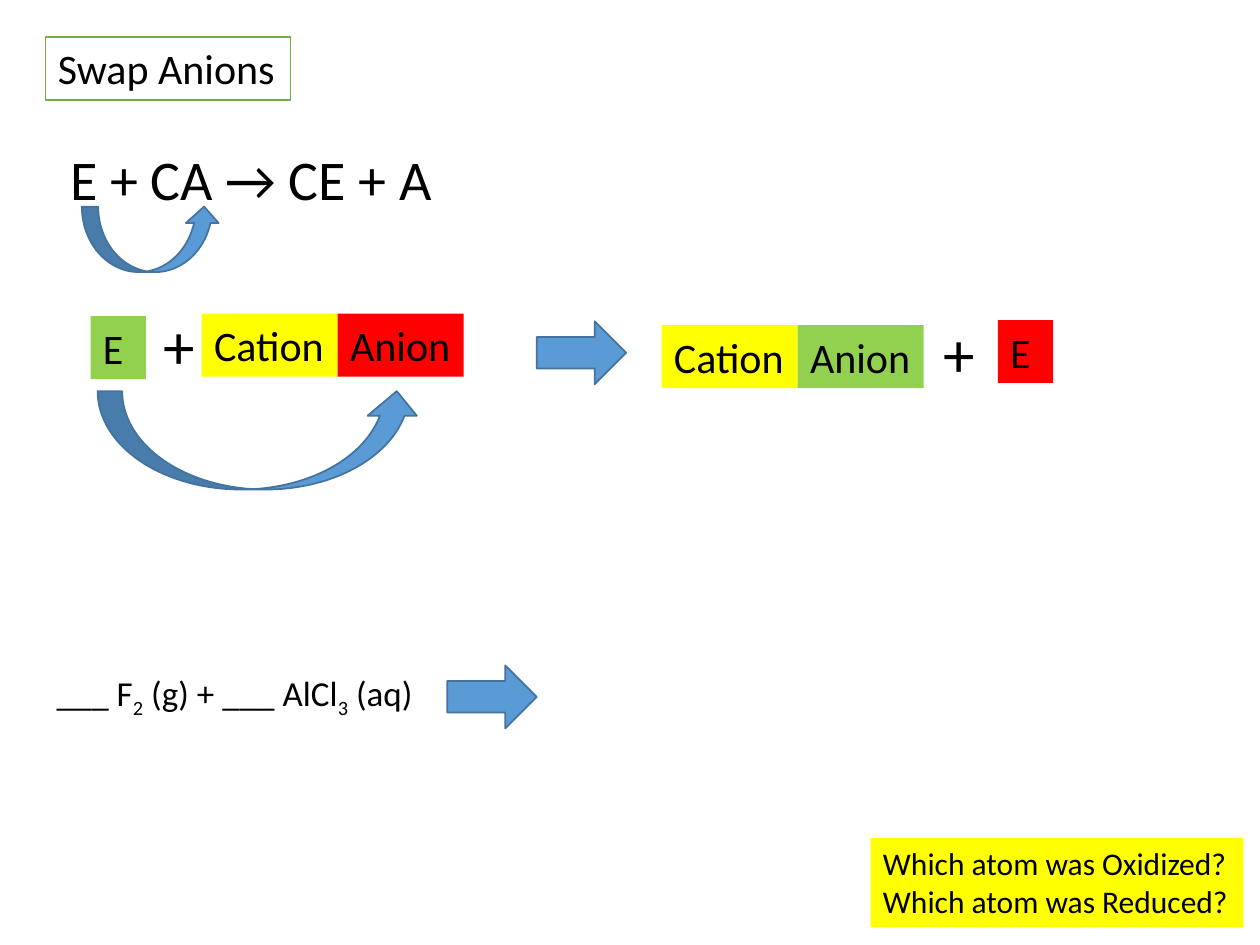
import pptx
import pptx.dml.color
import pptx.enum.shapes
import pptx.enum.text
import pptx.util

Pt = pptx.util.Pt
SHAPES = pptx.enum.shapes.MSO_SHAPE

COLORS = {
    "white": "FFFFFF",
    "black": "000000",
    "yellow": "FFFF00",
    "red": "FF0000",
    "green": "92D050",
    "border": "70AD47",
    "arrow": "5B9BD5",
    "arrow_line": "43739E",
}
TILE_HEIGHT = 36
CATION_WIDTH = 77.8
ANION_WIDTH = 72
ELEMENT_WIDTH = 31.7


def rgb(name):
    return pptx.dml.color.RGBColor.from_string(COLORS[name])


def paint(shape, fill=None, line=None):
    if fill:
        shape.fill.solid()
        shape.fill.fore_color.rgb = rgb(fill)
    if line:
        shape.line.color.rgb = rgb(line)
        shape.line.width = Pt(1)


def add_run(paragraph, text, size, subscript=False):
    run = paragraph.add_run()
    run.text = text
    font_format = {"name": "Calibri", "size": Pt(size)}
    for attribute, value in font_format.items():
        setattr(run.font, attribute, value)
    run.font.color.rgb = rgb("black")
    if subscript:
        run.font._element.set("baseline", "-25000")


def add_text(slide, box, paragraphs, size, fill=None, line=None):
    shape = slide.shapes.add_textbox(*map(Pt, box))
    paint(shape, fill, line)
    frame = shape.text_frame
    frame_format = {
        "word_wrap": False,
        "auto_size": pptx.enum.text.MSO_AUTO_SIZE.SHAPE_TO_FIT_TEXT,
    }
    for attribute, value in frame_format.items():
        setattr(frame, attribute, value)
    for index, runs in enumerate(paragraphs):
        paragraph = frame.add_paragraph() if index else frame.paragraphs[0]
        for text, subscript in runs:
            add_run(paragraph, text, size, subscript)


def add_label(slide, box, text, size, fill=None, line=None):
    paragraphs = [[(part, False)] for part in text.split("\n")]
    add_text(slide, box, paragraphs, size, fill, line)


def add_element(slide, left, top, fill):
    add_label(slide, (left, top, ELEMENT_WIDTH, TILE_HEIGHT), "E", 24, fill)


def add_compound(slide, left, top, anion_fill):
    add_label(slide, (left, top, CATION_WIDTH, TILE_HEIGHT), "Cation", 24, "yellow")
    anion_box = (left + CATION_WIDTH, top, ANION_WIDTH, TILE_HEIGHT)
    add_label(slide, anion_box, "Anion", 24, anion_fill)


def add_plus(slide, left, top):
    add_label(slide, (left, top, 32.4, 51.1), "+", 36)


def add_arrow(slide, kind, box):
    shape = slide.shapes.add_shape(kind, *map(Pt, box))
    shape.shadow.inherit = False
    paint(shape, "arrow", "arrow_line")
    return shape


def add_reaction_arrow(slide, left, top):
    add_arrow(slide, SHAPES.RIGHT_ARROW, (left, top, 51.1, 36))


def add_swap_arrow(slide, box):
    shape = add_arrow(slide, SHAPES.CURVED_LEFT_ARROW, box)
    shape.rotation = 270
    shape.element.spPr.xfrm.set("flipH", "1")


def main():
    presentation = pptx.Presentation()
    presentation.slide_width = Pt(720)
    presentation.slide_height = Pt(540)
    slide = presentation.slides.add_slide(presentation.slide_layouts[6])

    add_label(slide, (26, 21, 140, 36), "Swap Anions", 24, "white", "border")
    add_label(slide, (33, 79, 224, 46), "E + CA → CE + A", 32)
    add_swap_arrow(slide, (67.7, 97.2, 37.4, 79.2))

    add_element(slide, 51.8, 180.7, "green")
    add_compound(slide, 378, 185.8, "green")
    add_compound(slide, 115.2, 179.3, "red")
    add_reaction_arrow(slide, 306.7, 183.6)
    add_swap_arrow(slide, (120.2, 159.1, 56.2, 185))
    add_plus(slide, 86.4, 171.4)
    add_element(slide, 570.2, 182.9, "red")
    add_plus(slide, 532.1, 176.4)

    equation = [
        ("___ F", False),
        ("2", True),
        (" (g) + ___ AlCl", False),
        ("3", True),
        (" (aq)", False),
    ]
    add_text(slide, (25.2, 380.2, 229.7, 31.7), [equation], 20)
    add_reaction_arrow(slide, 255.6, 380.2)
    questions = "Which atom was Oxidized?\nWhich atom was Reduced?"
    add_label(slide, (497.5, 478.8, 213.1, 51.1), questions, 18, "yellow")

    presentation.save("out.pptx")


if __name__ == "__main__":
    main()
